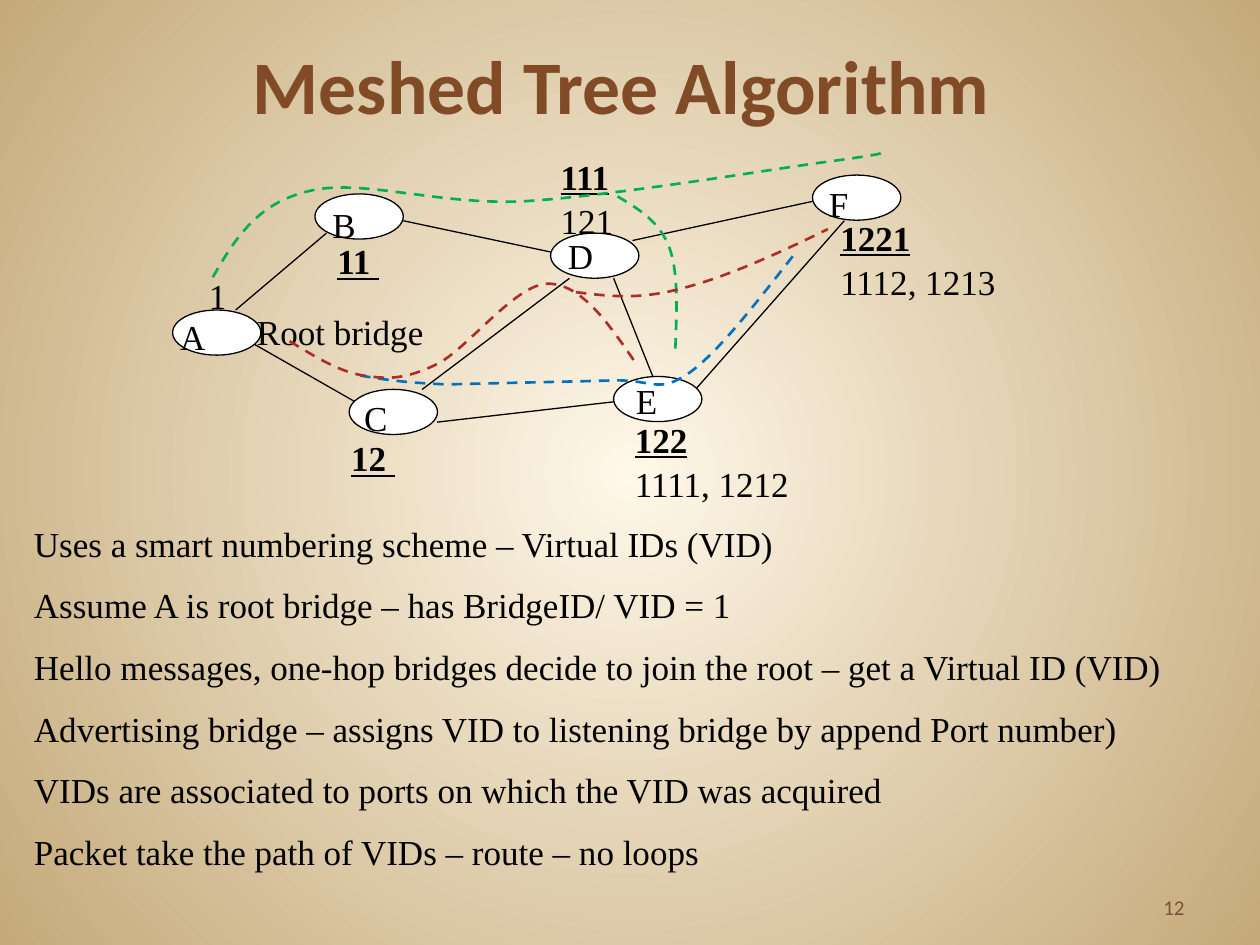
from dataclasses import dataclass

from lxml import etree
from pptx import Presentation
from pptx.dml.color import RGBColor
from pptx.enum.dml import MSO_LINE
from pptx.enum.shapes import MSO_CONNECTOR, MSO_SHAPE
from pptx.enum.text import MSO_ANCHOR, MSO_AUTO_SIZE, PP_ALIGN
from pptx.oxml.ns import qn
from pptx.util import Cm, Pt

STRAIGHT = MSO_CONNECTOR.STRAIGHT
OVAL = MSO_SHAPE.OVAL
DASH = MSO_LINE.DASH
NO_AUTOFIT = MSO_AUTO_SIZE.NONE
TOP, BOTTOM = MSO_ANCHOR.TOP, MSO_ANCHOR.BOTTOM
LEFT, CENTER, RIGHT = PP_ALIGN.LEFT, PP_ALIGN.CENTER, PP_ALIGN.RIGHT


@dataclass(frozen=True)
class Theme:
    heading_font: str = "Calibri"
    text_font: str = "Times New Roman"
    title_size: float = 43.2
    text_size: float = 20
    number_size: float = 12
    line_spacing: float = 1.05
    center: str = "FFF7E8"
    edge: str = "C4AA7A"
    title: str = "804B26"
    number: str = "795339"
    ink: str = "000000"
    node: str = "FFFFFF"
    green: str = "00B050"
    blue: str = "0070C0"
    red: str = "AD2E27"


THEME = Theme()
NODE_SIZE = (1.78, 0.91)
LETTER_SIZE = (1.27, 1.35)

# Letter, corner of the oval, corner of the letter's box (cm)
NODES = [
    ("A", (3.48, 6.25), (3.38, 6.2)),
    ("B", (6.35, 3.91), (6.45, 3.94)),
    ("F", (16.38, 3.53), (16.46, 3.51)),
    ("E", (12.37, 7.59), (12.57, 7.49)),
    ("C", (7.04, 7.85), (7.09, 7.82)),
    ("D", (11.1, 4.7), (11.2, 4.57)),
]
LINKS = [
    ((4.75, 6.25), (6.58, 4.7)),
    ((5.11, 6.93), (7.16, 8.1)),
    ((8.51, 7.85), (11.48, 5.61)),
    ((8.13, 4.45), (11.1, 5.08)),
    ((8.81, 8.51), (12.37, 8.1)),
    ((12.37, 5.61), (13.16, 7.59)),
    ((12.75, 4.85), (16.38, 4.06)),
    ((14.02, 7.85), (17.02, 4.45)),
]
# Box (cm), primary VID in bold, other text
LABELS = [
    ((4.93, 6.1, 4.57, 1.17), None, "Root bridge"),
    ((3.96, 5.36, 1.85, 1.17), None, "1"),
    ((6.55, 4.67, 1.83, 1.17), "11 ", None),
    ((6.83, 8.64, 1.85, 1.17), "12 ", None),
    ((11.05, 2.97, 2.34, 1.88), "111", "121"),
    ((12.55, 8.26, 4.5, 2.31), "122", "1111, 1212"),
    ((16.69, 4.19, 4.17, 1.88), "1221", "1112, 1213"),
]
# Start point, then two control points and an end point for each curve (cm)
ROUTES = [
    (THEME.green, [(4.29, 5.59), (4.72, 4.85), (5.16, 4.11), (6.2, 3.86),
                   (7.24, 3.58), (8.81, 4.14), (10.54, 4.06),
                   (12.27, 3.96), (15.32, 3.45), (16.54, 3.28),
                   (17.73, 3.12), (17.75, 3.1), (17.81, 3.07)]),
    (THEME.green, [(12.45, 3.96), (12.88, 4.22), (13.28, 4.45), (13.49, 4.98),
                   (13.69, 5.51), (13.64, 6.35), (13.61, 7.16)]),
    (THEME.blue, [(7.26, 7.57), (7.72, 7.65), (8.18, 7.72), (9.04, 7.75),
                  (10.15, 7.72), (11.26, 7.7), (12.37, 7.67),
                  (13.18, 7.65), (13.26, 7.95), (13.89, 7.52),
                  (14.5, 7.09), (15.27, 6.07), (16.05, 5.08)]),
    (THEME.red, [(5.84, 6.88), (6.35, 7.19), (6.83, 7.49), (7.32, 7.57),
                 (7.82, 7.65), (8.18, 7.65), (8.81, 7.34),
                 (9.42, 7.04), (10.39, 5.72), (11.05, 5.72),
                 (11.73, 5.72), (12.29, 6.55), (12.85, 7.37)]),
    (THEME.red, [(11.61, 5.89), (12.24, 5.97), (12.88, 6.05), (13.72, 5.82),
                 (14.58, 5.61), (15.65, 5.13), (16.69, 4.62)]),
]
POINTS = [
    "Uses a smart numbering scheme – Virtual IDs (VID)",
    "Assume A is root bridge – has BridgeID/ VID = 1",
    "Hello messages, one-hop bridges decide to join the root – get a Virtual ID (VID)",
    "Advertising bridge – assigns VID to listening bridge by append Port number)",
    "VIDs are associated to ports on which the VID was acquired",
    "Packet take the path of VIDs – route – no loops",
]


def rgb(color):
    return RGBColor.from_string(color)


def paint_background(slide):
    fill = slide.background.fill
    fill.gradient()
    for stop, color, position in zip(fill.gradient_stops, (THEME.center, THEME.edge), (0, 1)):
        stop.color.rgb = rgb(color)
        stop.position = position
    gradient = slide.element.find(".//" + qn("a:gradFill"))
    gradient.remove(gradient.find(qn("a:lin")))
    radial = etree.SubElement(gradient, qn("a:path"), {"path": "circle"})
    etree.SubElement(radial, qn("a:fillToRect"), dict.fromkeys("ltrb", "50000"))


def place(shape, box):
    shape.left, shape.top, shape.width, shape.height = map(Cm, box)


def prepare_frame(shape, anchor=TOP):
    frame = shape.text_frame
    frame.word_wrap = True
    frame.auto_size = NO_AUTOFIT
    frame.vertical_anchor = anchor
    return frame


def write(frame, texts, font=THEME.text_font, size=THEME.text_size, color=THEME.ink,
          align=LEFT, after=0, spacing=THEME.line_spacing, strong=()):
    """Write one paragraph per text; texts in strong are bold and underlined."""
    for index, text in enumerate(texts):
        paragraph = frame.paragraphs[0] if index == 0 else frame.add_paragraph()
        paragraph.alignment = align
        paragraph.line_spacing = spacing
        paragraph.space_before, paragraph.space_after = Pt(0), Pt(after)
        run = paragraph.add_run()
        run.text = text
        run.font.name, run.font.size = font, Pt(size)
        run.font.color.rgb = rgb(color)
        run.font.bold = run.font.underline = text in strong


def add_text(slide, box, texts, anchor=TOP, **style):
    text_box = slide.shapes.add_textbox(*map(Cm, box))
    write(prepare_frame(text_box, anchor), texts, **style)


def fill_title(slide):
    title = slide.shapes.title
    place(title, (1.27, 0.84, 22.86, 1.9))
    frame = prepare_frame(title, BOTTOM)
    write(frame, ["Meshed Tree Algorithm "], THEME.heading_font, THEME.title_size,
          THEME.title, CENTER, spacing=1)
    frame.paragraphs[0].runs[0].font.bold = True


def fill_points(slide):
    body = slide.placeholders[1]
    place(body, (0.43, 10.36, 23.93, 7.4))
    frame = prepare_frame(body)
    write(frame, POINTS, after=10)
    for paragraph in frame.paragraphs:
        properties = paragraph._p.get_or_add_pPr()
        properties.set("marL", "0")
        properties.set("indent", "0")
        etree.SubElement(properties, qn("a:buNone"))


def style_line(line, color, width):
    line.color.rgb = rgb(color)
    line.width = Pt(width)


def add_link(slide, start, end):
    link = slide.shapes.add_connector(STRAIGHT, *map(Cm, start + end))
    style_line(link.line, THEME.ink, 0.75)
    etree.SubElement(link._element.spPr, qn("a:effectLst"))


def add_node(slide, letter, corner, letter_corner):
    oval = slide.shapes.add_shape(OVAL, *map(Cm, corner + NODE_SIZE))
    oval.shadow.inherit = False
    oval.fill.solid()
    oval.fill.fore_color.rgb = rgb(THEME.node)
    style_line(oval.line, THEME.ink, 0.75)
    add_text(slide, letter_corner + LETTER_SIZE, [letter])


def add_route(slide, color, points):
    """Draw a dashed line of cubic curves."""
    start, *others = [(Cm(x), Cm(y)) for x, y in points]
    builder = slide.shapes.build_freeform(*start)
    builder.add_line_segments(others, close=False)
    route = builder.convert_to_shape()
    route.shadow.inherit = False
    route.fill.background()
    style_line(route.line, color, 1.5)
    route.line.dash_style = DASH
    outline = route._element.find(".//" + qn("a:path"))
    segments = outline.findall(qn("a:lnTo"))
    for first in range(0, len(segments), 3):
        curve = etree.SubElement(outline, qn("a:cubicBezTo"))
        for segment in segments[first:first + 3]:
            curve.append(segment[0])
            outline.remove(segment)


def main():
    presentation = Presentation()
    presentation.slide_width, presentation.slide_height = Cm(25.4), Cm(19.05)
    slide = presentation.slides.add_slide(presentation.slide_layouts[1])
    paint_background(slide)
    fill_title(slide)
    for start, end in LINKS:
        add_link(slide, start, end)
    for box, primary, other in LABELS:
        add_text(slide, box, [text for text in (primary, other) if text], strong=(primary,))
    for node in NODES:
        add_node(slide, *node)
    for color, points in ROUTES:
        add_route(slide, color, points)
    fill_points(slide)
    add_text(slide, (18.21, 17.35, 5.92, 1.32), ["12"], BOTTOM, font=THEME.heading_font,
             size=THEME.number_size, color=THEME.number, align=RIGHT, spacing=1)
    presentation.save("out.pptx")


if __name__ == "__main__":
    main()
